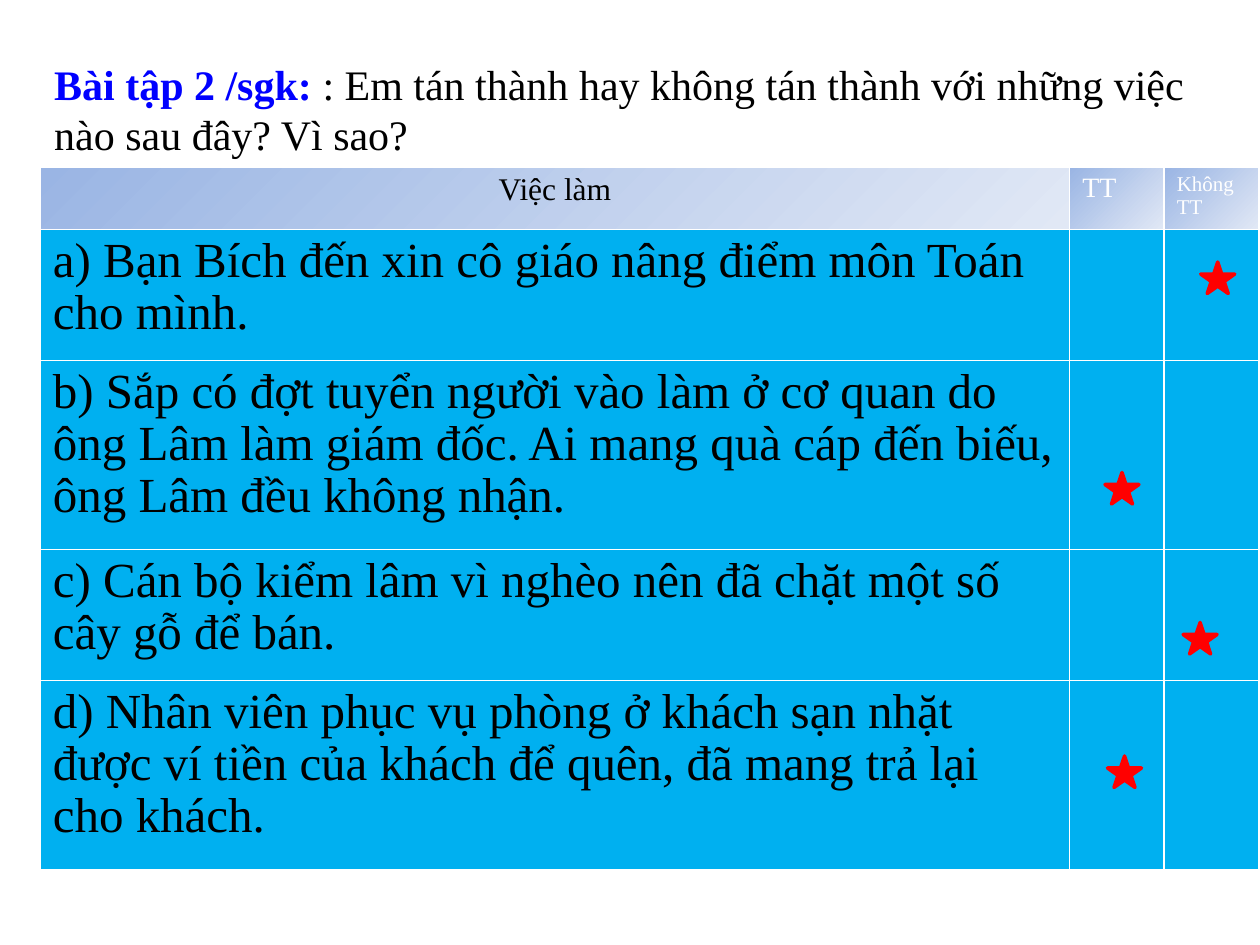
"""Build the exercise slide with its agree/disagree table and star answers."""
from dataclasses import dataclass

from pptx import Presentation
from pptx.dml.color import RGBColor
from pptx.enum.shapes import MSO_SHAPE
from pptx.enum.text import MSO_ANCHOR, MSO_AUTO_SIZE, PP_ALIGN
from pptx.util import Inches, Pt

STAR = MSO_SHAPE.STAR_5_POINT
MIDDLE = MSO_ANCHOR.MIDDLE
NO_AUTOFIT = MSO_AUTO_SIZE.NONE
LEFT, CENTER = PP_ALIGN.LEFT, PP_ALIGN.CENTER
TITLE_ONLY_LAYOUT = 5
FONT = "Times New Roman"
BLACK, WHITE, BLUE, RED = "000000", "FFFFFF", "0000FF", "FF0000"
ROW_FILL = "00B0F0"
HEADER_GRADIENT = ("9AB5E4", "E1E8F5")
COLUMN_WIDTHS = (8.17, 0.75, 0.75)
ROW_HEIGHTS = (0.49, 1.04, 1.5, 1.04, 1.5)
TABLE_LINE_SPACING = 0.96


@dataclass
class Header:
    lines: tuple[str, ...]
    size: int
    color: str
    alignment: PP_ALIGN


@dataclass
class Star:
    left: float
    top: float


HEADERS = (
    Header(("Việc làm",), 18, BLACK, CENTER),
    Header(("TT",), 16, WHITE, LEFT),
    Header(("Không", "TT"), 12, WHITE, LEFT),
)
ACTIONS = (
    "a) Bạn Bích đến xin cô giáo nâng điểm môn Toán cho mình.",
    "b) Sắp có đợt tuyển người vào làm ở cơ quan do ông Lâm làm giám đốc. "
    "Ai mang quà cáp đến biếu, ông Lâm đều không nhận.",
    "c) Cán bộ kiểm lâm vì nghèo nên đã chặt một số cây gỗ để bán.",
    "d) Nhân viên phục vụ phòng ở khách sạn nhặt được ví tiền của khách để quên, "
    "đã mang trả lại cho khách.",
)
STARS = (Star(9.53, 2.08), Star(8.77, 3.75), Star(9.39, 4.94), Star(8.79, 6))


def rgb(value: str) -> RGBColor:
    return RGBColor.from_string(value)


def add_run(paragraph, text: str, size: int, color: str, bold: bool = False) -> None:
    run = paragraph.add_run()
    run.text = text
    run.font.name = FONT
    run.font.size = Pt(size)
    run.font.bold = bold
    run.font.color.rgb = rgb(color)


def add_title(slide) -> None:
    title = slide.shapes.title
    title.left, title.top = Inches(0.33), Inches(0.41)
    title.width, title.height = Inches(9.67), Inches(0.91)
    frame = title.text_frame
    frame.word_wrap = True
    frame.auto_size = NO_AUTOFIT
    frame.vertical_anchor = MIDDLE
    paragraph = frame.paragraphs[0]
    paragraph.alignment = LEFT
    add_run(paragraph, "Bài tập 2 /sgk: ", 24, BLUE, bold=True)
    question = ": Em tán thành hay không tán thành với những việc nào sau đây? Vì sao?"
    add_run(paragraph, question, 24, BLACK)


def fill_header(cell, header: Header) -> None:
    cell.fill.gradient()
    cell.fill.gradient_angle = 315
    for stop, color in zip(cell.fill.gradient_stops, HEADER_GRADIENT):
        stop.color.rgb = rgb(color)
    frame = cell.text_frame
    for index, line in enumerate(header.lines):
        paragraph = frame.add_paragraph() if index else frame.paragraphs[0]
        paragraph.alignment = header.alignment
        paragraph.line_spacing = TABLE_LINE_SPACING
        add_run(paragraph, line, header.size, header.color)


def add_action_table(slide) -> None:
    frame = slide.shapes.add_table(
        len(ROW_HEIGHTS), len(COLUMN_WIDTHS), Inches(0.32), Inches(1.33),
        Inches(sum(COLUMN_WIDTHS)), Inches(sum(ROW_HEIGHTS)),
    )
    table = frame.table
    for column, width in zip(table.columns, COLUMN_WIDTHS):
        column.width = Inches(width)
    for row, height in zip(table.rows, ROW_HEIGHTS):
        row.height = Inches(height)
    for index, header in enumerate(HEADERS):
        fill_header(table.cell(0, index), header)
    for row_index, action in enumerate(ACTIONS, start=1):
        for column_index in range(len(COLUMN_WIDTHS)):
            cell = table.cell(row_index, column_index)
            cell.fill.solid()
            cell.fill.fore_color.rgb = rgb(ROW_FILL)
        paragraph = table.cell(row_index, 0).text_frame.paragraphs[0]
        paragraph.line_spacing = TABLE_LINE_SPACING
        add_run(paragraph, action, 28, BLACK)


def add_star(slide, star: Star) -> None:
    shape = slide.shapes.add_shape(
        STAR, Inches(star.left), Inches(star.top), Inches(0.27), Inches(0.25)
    )
    shape.shadow.inherit = False
    shape.fill.solid()
    shape.fill.fore_color.rgb = rgb(RED)
    shape.line.color.rgb = rgb(RED)
    shape.line.width = Pt(2)


def main() -> None:
    presentation = Presentation()
    presentation.slide_width, presentation.slide_height = Inches(10), Inches(7.5)
    slide = presentation.slides.add_slide(presentation.slide_layouts[TITLE_ONLY_LAYOUT])
    add_title(slide)
    add_action_table(slide)
    for star in STARS:
        add_star(slide, star)
    presentation.save("out.pptx")


if __name__ == "__main__":
    main()
